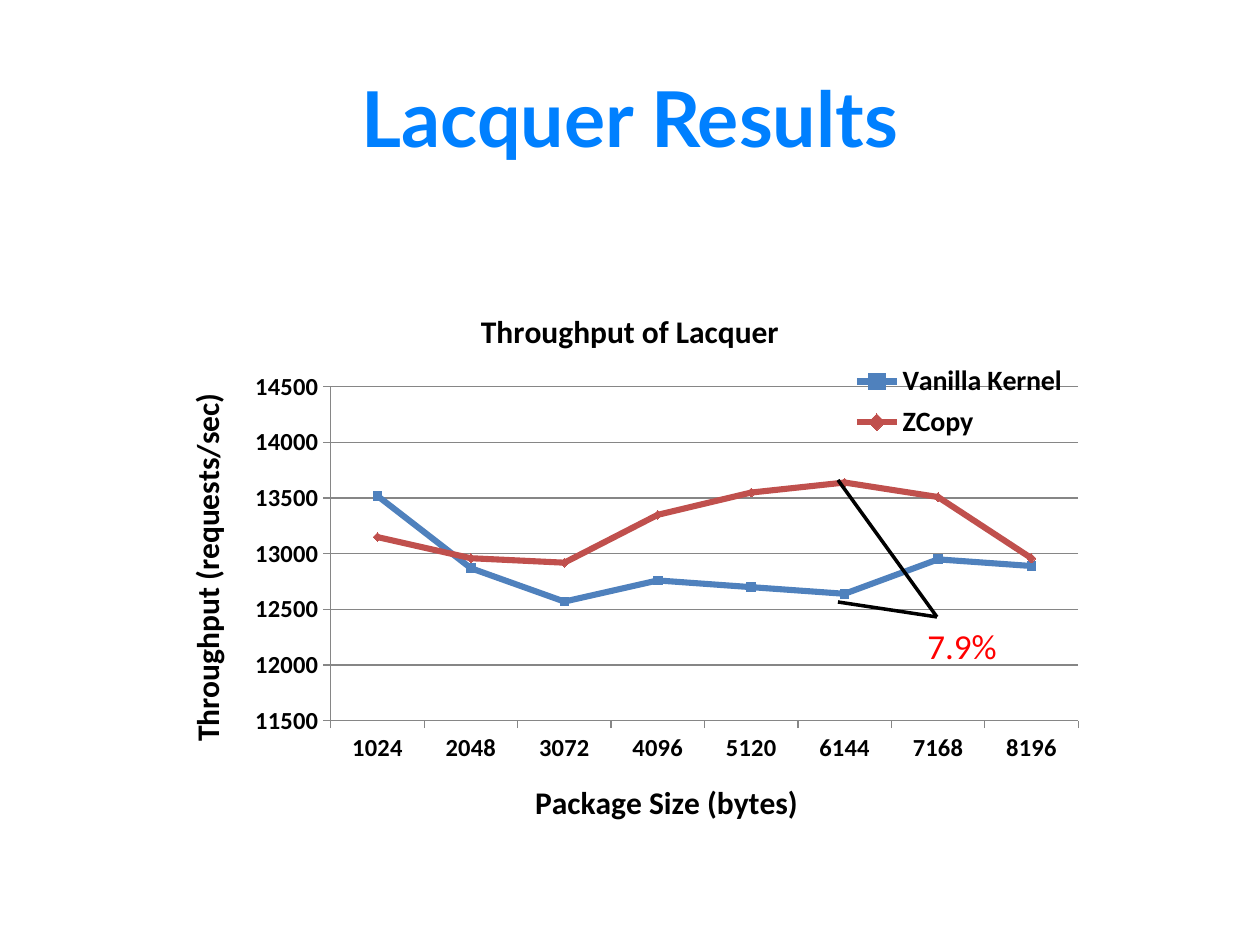
from lxml import etree
from pptx import Presentation
from pptx.chart.data import CategoryChartData
from pptx.dml.color import RGBColor
from pptx.enum.chart import XL_CHART_TYPE, XL_LEGEND_POSITION, XL_MARKER_STYLE, XL_TICK_MARK
from pptx.enum.shapes import MSO_CONNECTOR
from pptx.enum.text import MSO_ANCHOR, PP_ALIGN
from pptx.oxml.ns import qn
from pptx.util import Pt

PX = 914400 // 126
LINE_MARKERS = XL_CHART_TYPE.LINE_MARKERS
RIGHT = XL_LEGEND_POSITION.RIGHT
SQUARE, DIAMOND = XL_MARKER_STYLE.SQUARE, XL_MARKER_STYLE.DIAMOND
OUTSIDE, NO_TICK = XL_TICK_MARK.OUTSIDE, XL_TICK_MARK.NONE
STRAIGHT = MSO_CONNECTOR.STRAIGHT
MIDDLE, CENTER, LEFT = MSO_ANCHOR.MIDDLE, PP_ALIGN.CENTER, PP_ALIGN.LEFT

# Content
HEADING = "Lacquer Results"
CHART_TITLE = "Throughput of Lacquer"
SIZE_TITLE = "Package Size (bytes)"
RATE_TITLE = "Throughput (requests/sec)"
PACKAGE_SIZES = ["1024", "2048", "3072", "4096", "5120", "6144", "7168", "8196"]
SERIES = [  # name, colour, marker, requests per second
    ("Vanilla Kernel", "4F81BD", SQUARE,
     [13520, 12870, 12570, 12760, 12700, 12640, 12950, 12890]),
    ("ZCopy", "C0504D", DIAMOND,
     [13150, 12960, 12920, 13350, 13550, 13640, 13510, 12960]),
]
GAIN = "7.9%"

# Places in px
HEADING_BOX = (63, 38, 1134, 157)
CHART_BOX = (164, 286, 932, 567)
PLOT_BOX = (331, 387, 747, 334)
LEGEND_BOX = (855, 358, 210, 88)
GAIN_BOX = (915, 617, 96, 56)
CALLOUT_TIP = (937, 617)
CALLOUT_ENDS = [(838, 602), (838, 480)]


def px(values):
    return [value * PX for value in values]


def color(hex_text):
    return RGBColor.from_string(hex_text)


def style(font, size, hex_text="000000", bold=True, face="Calibri"):
    font.size, font.bold, font.name = Pt(size), bold, face
    font.color.rgb = color(hex_text)


def add_text(slide, box, text, align, wrap, *font):
    frame = slide.shapes.add_textbox(*px(box)).text_frame
    frame.word_wrap = wrap
    frame.vertical_anchor = MIDDLE
    frame.text = text
    paragraph = frame.paragraphs[0]
    paragraph.alignment = align
    style(paragraph.runs[0].font, *font)


def add_title(owner, text):
    owner.has_title = True
    title = owner.chart_title if hasattr(owner, "chart_title") else owner.axis_title
    title.text_frame.text = text
    style(title.text_frame.paragraphs[0].runs[0].font, 18)
    return title


def place(part, box, index, inner=False):
    """Set a manual layout, as fractions of the chart frame."""
    for old in part.findall(qn("c:layout")):
        part.remove(old)
    layout = etree.Element(qn("c:layout"))
    manual = etree.SubElement(layout, qn("c:manualLayout"))
    left, top, width, height = CHART_BOX
    x, y, w, h = box
    settings = [("layoutTarget", "inner")] if inner else []
    settings += [("xMode", "edge"), ("yMode", "edge"),
                 ("x", round((x - left) / width, 3)), ("y", round((y - top) / height, 3)),
                 ("w", round(w / width, 3)), ("h", round(h / height, 3))]
    for tag, value in settings:
        etree.SubElement(manual, qn("c:" + tag)).set("val", str(value))
    part.insert(index, layout)


def add_throughput_chart(slide):
    data = CategoryChartData(number_format="General")
    data.categories = PACKAGE_SIZES
    for name, _, _, rates in SERIES:
        data.add_series(name, rates)
    chart = slide.shapes.add_chart(LINE_MARKERS, *px(CHART_BOX), data).chart
    style(chart.font, 10, bold=False)
    add_title(chart, CHART_TITLE)

    # Axes
    sizes, rates = chart.category_axis, chart.value_axis
    add_title(sizes, SIZE_TITLE)
    rate_title = add_title(rates, RATE_TITLE)
    rate_title.text_frame._txBody.bodyPr.set("rot", "-5400000")
    rates.minimum_scale, rates.maximum_scale, rates.major_unit = 11500, 14500, 500
    rates.has_major_gridlines = True
    rates.major_gridlines.format.line.color.rgb = color("868686")
    for axis in (sizes, rates):
        axis.major_tick_mark, axis.minor_tick_mark = OUTSIDE, NO_TICK
        axis.format.line.color.rgb = color("868686")
        style(axis.tick_labels.font, 14)

    # Series
    chart.plots[0].vary_by_categories = False
    for series, (_, hex_text, marker, _) in zip(chart.plots[0].series, SERIES):
        series.smooth = False
        series.format.line.width = Pt(3.5)
        series.format.line.color.rgb = color(hex_text)
        series.marker.style, series.marker.size = marker, 5
        series.marker.format.fill.solid()
        series.marker.format.fill.fore_color.rgb = color(hex_text)
        series.marker.format.line.color.rgb = color(hex_text)

    # Legend over the plot
    chart.has_legend = True
    chart.legend.position = RIGHT
    chart.legend.include_in_layout = True
    style(chart.legend.font, 16)
    place(chart.legend._element, LEGEND_BOX, 1)
    place(chart._chartSpace.chart.plotArea, PLOT_BOX, 0, inner=True)


def add_callout_line(slide, end):
    line = slide.shapes.add_connector(STRAIGHT, *px(CALLOUT_TIP + end))
    line.line.color.rgb = color("000000")
    line.line.width = Pt(2)
    etree.SubElement(line._element.spPr, qn("a:effectLst"))


def main():
    deck = Presentation()
    deck.slide_width, deck.slide_height = px((1260, 945))
    slide = deck.slides.add_slide(deck.slide_layouts[6])
    add_throughput_chart(slide)
    add_text(slide, HEADING_BOX, HEADING, CENTER, True, 44, "0080FF", True, "Lato")
    for end in CALLOUT_ENDS:
        add_callout_line(slide, end)
    add_text(slide, GAIN_BOX, GAIN, LEFT, False, 20, "FF0000", False)
    deck.save("out.pptx")


if __name__ == "__main__":
    main()
